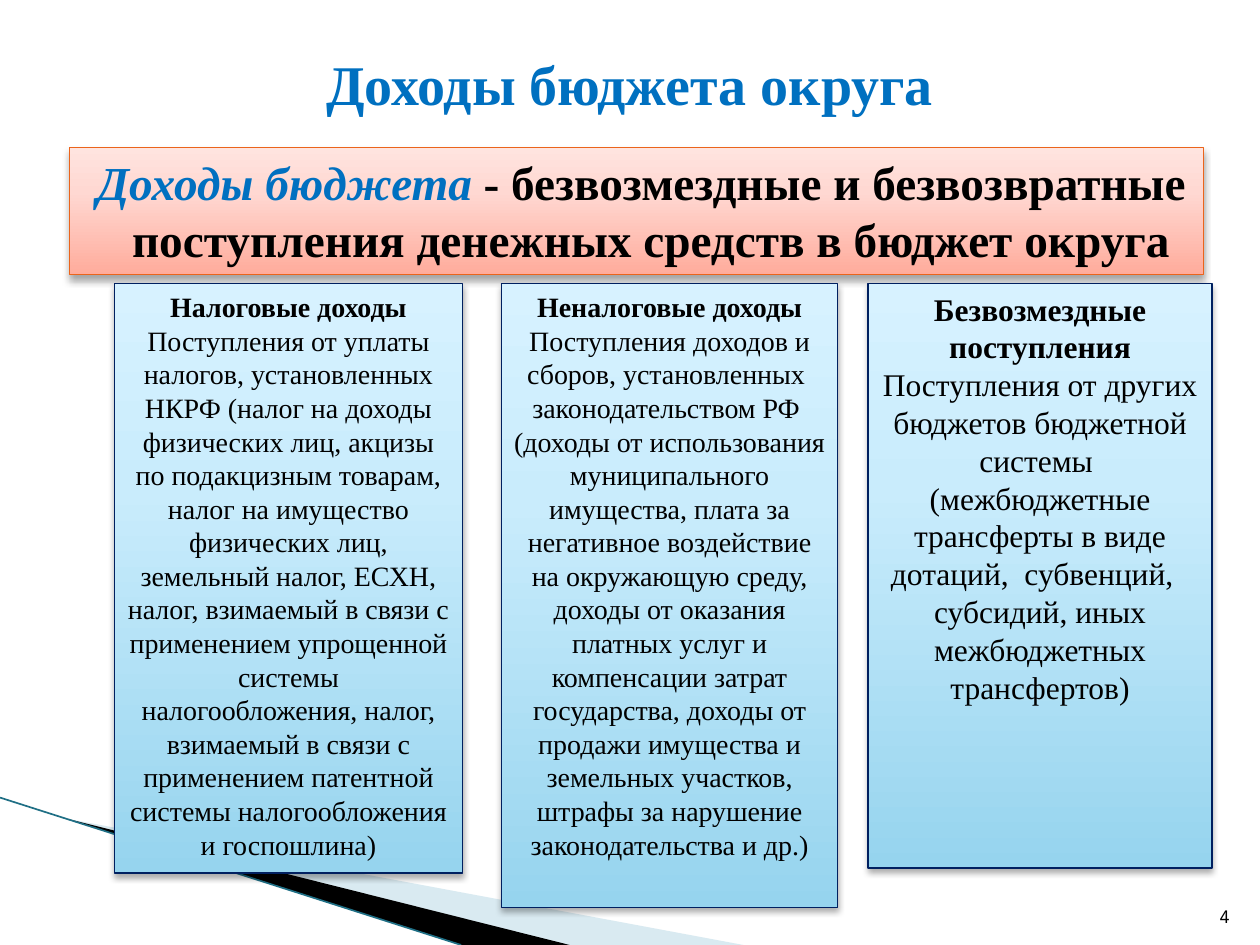
from collections import namedtuple
from lxml import etree
from pptx import Presentation
from pptx.dml.color import RGBColor as Color
from pptx.enum.shapes import MSO_CONNECTOR as Connector, MSO_SHAPE as Shape
from pptx.enum.text import MSO_ANCHOR as Anchor, PP_ALIGN as Align
from pptx.oxml import parse_xml
from pptx.oxml.ns import nsdecls, qn
from pptx.util import Inches, Pt

CELL = Inches(0.1)
COLUMNS, ROWS = 100, 75
SERIF, MONO = "Times New Roman", "Noto Sans Mono"
COLORS = {
    "heading": "0070C0", "text": "000000", "band": "000000",
    "pale": "A0CBDC", "edge": "1F6F85",
    "definition_line": "EB641B", "income_line": "002060",
}
DEFINITION_STOPS = [(0, "FFAC9C"), (65, "FFD8D2"), (100, "FFE4DF")]
INCOME_STOPS = [(0, "96D4EE"), (65, "C9ECFC"), (100, "D7F2FF")]

Box = namedtuple("Box", "left top width height")
Shadow = namedtuple("Shadow", "alpha blur distance")

INCOMES = [
    (Box(9.1, 22.5, 27.6, 46.8), 16, [
        "Налоговые доходы",
        "Поступления от уплаты налогов, установленных НКРФ (налог на доходы "
        "физических лиц, акцизы по подакцизным товарам, налог на имущество "
        "физических лиц, земельный налог, ЕСХН, налог, взимаемый в связи с "
        "применением упрощенной системы налогообложения, налог, взимаемый в "
        "связи с применением патентной системы налогообложения и госпошлина)"]),
    (Box(39.8, 22.5, 26.7, 49.5), 16, [
        "Неналоговые доходы",
        "Поступления доходов и сборов, установленных  законодательством РФ ",
        "(доходы от использования муниципального имущества, плата за "
        "негативное воздействие на окружающую среду, доходы от оказания "
        "платных услуг и компенсации затрат государства, доходы от продажи "
        "имущества и земельных участков, штрафы за нарушение "
        "законодательства и др.)"]),
    (Box(68.9, 22.5, 27.3, 46.4), 18, [
        "Безвозмездные поступления",
        "Поступления от других бюджетов бюджетной системы ",
        "(межбюджетные трансферты в виде дотаций,  субвенций,   субсидий, "
        "иных межбюджетных трансфертов)"]),
]


def grid(*cells):
    return [int(cell * CELL) for cell in cells]


def style_font(font, size, color, bold=False, italic=False, name=SERIF):
    font.name, font.size = name, Pt(size)
    font.bold, font.italic = bold, italic
    font.color.rgb = Color.from_string(COLORS[color])


def add_text(page, box, text, anchor, align, **style):
    frame = page.shapes.add_textbox(*grid(*box)).text_frame
    frame.word_wrap, frame.vertical_anchor = True, anchor
    para = frame.paragraphs[0]
    para.text, para.alignment = text, align
    style_font(para.font, **style)


def add_panel(page, box, stops, line, shadow):
    panel = page.shapes.add_shape(Shape.RECTANGLE, *grid(*box))
    panel.fill.gradient()
    gradient = panel.fill._fill._gradFill
    for child in list(gradient):
        gradient.remove(child)
    stop_list = etree.SubElement(gradient, qn("a:gsLst"))
    for position, color in stops:
        stop = etree.SubElement(stop_list, qn("a:gs"), pos=str(position * 1000))
        etree.SubElement(stop, qn("a:srgbClr"), val=color)
    etree.SubElement(gradient, qn("a:lin"), ang=str(270 * 60000), scaled="0")
    panel.line.color.rgb = Color.from_string(COLORS[line])
    panel.line.width = Pt(0.75)
    panel._element.spPr.append(parse_xml(
        f'<a:effectLst {nsdecls("a")}><a:outerShdw blurRad="{Pt(shadow.blur)}" '
        f'dist="{Pt(shadow.distance)}" dir="5400000" rotWithShape="0">'
        f'<a:srgbClr val="000000"><a:alpha val="{shadow.alpha * 1000}"/></a:srgbClr>'
        '</a:outerShdw></a:effectLst>'))
    frame = panel.text_frame
    frame.word_wrap, frame.vertical_anchor = True, Anchor.TOP
    return frame


def add_wedge(page, points, color, alpha=100):
    start, *rest = [grid(*point) for point in points]
    builder = page.shapes.build_freeform(*start)
    builder.add_line_segments(rest, close=True)
    wedge = builder.convert_to_shape()
    wedge.shadow.inherit = False
    wedge.fill.solid()
    wedge.fill.fore_color.rgb = Color.from_string(COLORS[color])
    wedge.line.fill.background()
    tint = wedge._element.spPr.find(".//" + qn("a:srgbClr"))
    etree.SubElement(tint, qn("a:alpha"), val=str(alpha * 1000))


def add_corner(page, box):
    right, bottom = box.left + box.width, box.top + box.height
    tip = (5.4, box.top + 1.7)
    add_wedge(page, [tip, (59, bottom), (45.1, bottom)], "pale", 40)
    add_wedge(page, [tip, (45.2, bottom), (right, bottom)], "band")
    edge = page.shapes.add_connector(
        Connector.STRAIGHT, *grid(box.left, box.top, right, bottom))
    edge.line.color.rgb = Color.from_string(COLORS["edge"])
    edge.line.width = Pt(0.95)
    etree.SubElement(edge._element.spPr, qn("a:effectLst"))


def add_definition(page, box):
    frame = add_panel(page, box, DEFINITION_STOPS, "definition_line",
                      Shadow(35, 4, 3))
    para = frame.paragraphs[0]
    para.alignment = Align.LEFT
    properties = para._p.get_or_add_pPr()
    properties.set("marL", str(Inches(0.4)))
    properties.set("indent", str(Inches(-0.28)))
    for text, color, italic in [
            ("Доходы бюджета ", "heading", True),
            ("- безвозмездные и безвозвратные поступления денежных средств "
             "в бюджет округа", "text", False)]:
        span = para.add_run()
        span.text = text
        style_font(span.font, 27, color, bold=True, italic=italic)


def add_income(page, box, size, texts):
    frame = add_panel(page, box, INCOME_STOPS, "income_line",
                      Shadow(32, 3.5, 2.2))
    for index, text in enumerate(texts):
        para = frame.add_paragraph() if index else frame.paragraphs[0]
        para.text, para.alignment = text, Align.CENTER
        style_font(para.font, size, "text", bold=index == 0)


def main():
    deck = Presentation()
    deck.slide_width, deck.slide_height = grid(COLUMNS, ROWS)
    page = deck.slides.add_slide(deck.slide_layouts[6])
    add_corner(page, Box(0, 63.3, 36.6, 11.7))
    add_text(page, Box(5, 3, 90, 7.2), "Доходы бюджета округа",
             Anchor.MIDDLE, Align.CENTER, size=32, color="heading", bold=True)
    add_definition(page, Box(5.5, 11.7, 90, 10.1))
    for box, size, texts in INCOMES:
        add_income(page, box, size, texts)
    add_text(page, Box(94.6, 70.1, 4, 4), "4", Anchor.BOTTOM, Align.RIGHT,
             size=10, color="text", name=MONO)
    deck.save("out.pptx")


if __name__ == "__main__":
    main()
